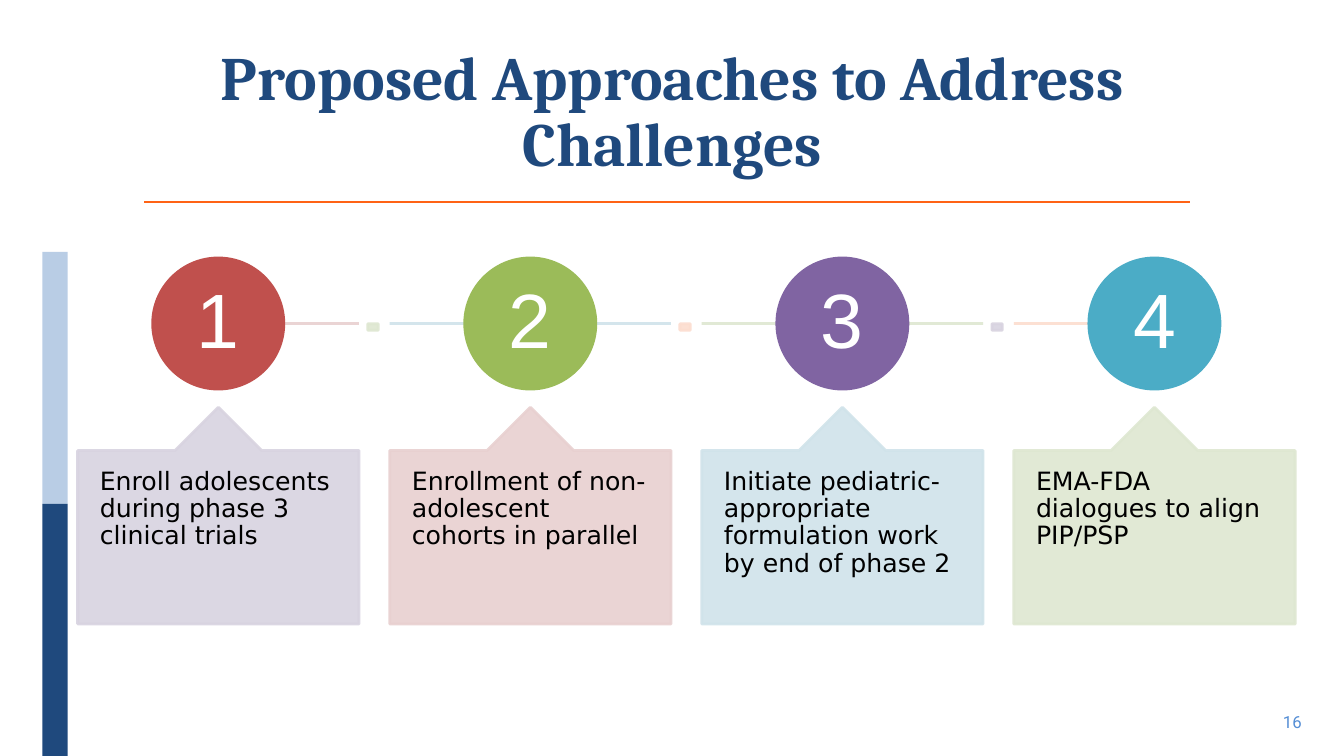
from dataclasses import dataclass

from lxml.etree import SubElement
from pptx import Presentation
from pptx.dml.color import RGBColor as Rgb
from pptx.enum.shapes import MSO_CONNECTOR as Conn, MSO_SHAPE as Shape
from pptx.enum.text import MSO_ANCHOR as Anchor, PP_ALIGN as Align
from pptx.oxml.ns import qn
from pptx.util import Inches, Pt


@dataclass(frozen=True)
class Theme:
    navy: str = "1F497D"
    sky: str = "B9CDE5"
    orange: str = "FF6315"
    page: str = "558ED5"
    black: str = "000000"
    white: str = "FFFFFF"
    rose: str = "E8D0D0"
    sage: str = "DEE7D1"
    lilac: str = "D8D3E0"
    ice: str = "D0E3EA"
    peach: str = "FCDDCF"
    title_size: int = 44
    digit_size: int = 55
    body_size: int = 18
    page_size: int = 12


THEME = Theme()
LEFT, PITCH, CARD = 0.77, 3.095, 2.79
DISC, AXIS = 1.3, 3.21

# Text, disc, card, link, dash, link start and end from the card's left edge
STEPS = [
    ("Enroll adolescents during phase 3 clinical trials",
     "C0504D", THEME.lilac, THEME.rose, THEME.sage, 1.55, CARD),
    ("Enrollment of non-adolescent cohorts in parallel",
     "9BBB59", THEME.rose, THEME.ice, THEME.peach, 0, CARD),
    ("Initiate pediatric-appropriate formulation work by end of phase 2",
     "8064A2", THEME.ice, THEME.sage, THEME.lilac, 0, CARD),
    ("EMA-FDA dialogues to align PIP/PSP",
     "4BACC6", THEME.sage, THEME.peach, None, 0, CARD / 2),
]


def fade(shape):
    """Make the shape's solid colours 90 % opaque."""
    for color in shape._element.spPr.iter(qn("a:srgbClr")):
        SubElement(color, qn("a:alpha"), val="90000")


def add_block(slide, kind, box, color, line=2):
    shape = slide.shapes.add_shape(kind, *map(Inches, box))
    shape.shadow.inherit = False
    shape.fill.solid()
    shape.fill.fore_color.rgb = Rgb.from_string(color)
    if line:
        shape.line.color.rgb = Rgb.from_string(color)
        shape.line.width = Pt(line)
    else:
        shape.line.fill.background()
    return shape


def add_line(slide, start, end, y, color, width):
    line = slide.shapes.add_connector(
        Conn.STRAIGHT, *map(Inches, (start, y, end, y)))
    line.line.color.rgb = Rgb.from_string(color)
    line.line.width = Pt(width)
    SubElement(line._element.spPr, qn("a:effectLst"))
    return line


def set_text(shape, text, font, size, color, align, anchor, pad,
             bold=False, wrap=True, spacing=0.9):
    frame = shape.text_frame
    across, down = map(Inches, pad)
    form = dict(word_wrap=wrap, vertical_anchor=anchor, margin_left=across,
                margin_right=across, margin_top=down, margin_bottom=down)
    for name, value in form.items():
        setattr(frame, name, value)
    frame.text = text
    para = frame.paragraphs[0]
    para.alignment, para.line_spacing = align, spacing
    style = dict(name=font, size=Pt(size), bold=bold)
    for name, value in style.items():
        setattr(para.font, name, value)
    para.font.color.rgb = Rgb.from_string(color)


def add_title(slide, text):
    title = slide.shapes.title
    place = dict(left=0.92, top=0.4, width=11.5, height=1.45)
    for name, value in place.items():
        setattr(title, name, Inches(value))
    set_text(title, text, "Cambria", THEME.title_size, THEME.navy,
             Align.CENTER, Anchor.MIDDLE, (0.1, 0.05), bold=True)
    add_line(slide, 1.43, 11.8, 2, THEME.orange, 1.5)


def add_step(slide, index, step):
    text, hue, tint, link, dash, start, end = step
    left = LEFT + index * PITCH
    fade(add_line(slide, left + start, left + end, AXIS, link, 2))
    if dash:
        fade(add_block(slide, Shape.MATH_MINUS,
                       (left + 2.86, 3.11, 0.14, 0.27), dash))
    disc = add_block(slide, Shape.OVAL,
                     (left + (CARD - DISC) / 2, AXIS - DISC / 2, DISC, DISC),
                     hue)
    set_text(disc, str(index + 1), "Arial", THEME.digit_size, THEME.white,
             Align.CENTER, Anchor.MIDDLE, (0.05, 0.05))
    card = add_block(slide, Shape.UP_ARROW_CALLOUT,
                     (left, 4.04, CARD, 2.15), tint)
    for place, value in enumerate((0.5, 0.2, 0.2, 1)):
        card.adjustments[place] = value
    fade(card)
    set_text(card, text, "DejaVu Sans", THEME.body_size, THEME.black,
             Align.LEFT, Anchor.TOP, (0.22, 0.18))


def add_page(slide, number):
    box = slide.shapes.add_textbox(*map(Inches, (12.6, 7.01, 0.41, 0.3)))
    set_text(box, number, "Roboto", THEME.page_size, THEME.page,
             Align.RIGHT, Anchor.TOP, (0.1, 0.05), wrap=False, spacing=1)


def main():
    deck = Presentation()
    deck.slide_width, deck.slide_height = Inches(13.33), Inches(7.5)
    slide = deck.slides.add_slide(deck.slide_layouts[5])
    add_title(slide, "Proposed Approaches to Address Challenges")
    for index, step in enumerate(STEPS):
        add_step(slide, index, step)
    for top, color in ((2.5, THEME.sky), (5, THEME.navy)):
        add_block(slide, Shape.RECTANGLE, (0.42, top, 0.25, 2.5), color, 0)
    add_page(slide, "16")
    deck.save("out.pptx")


if __name__ == "__main__":
    main()
